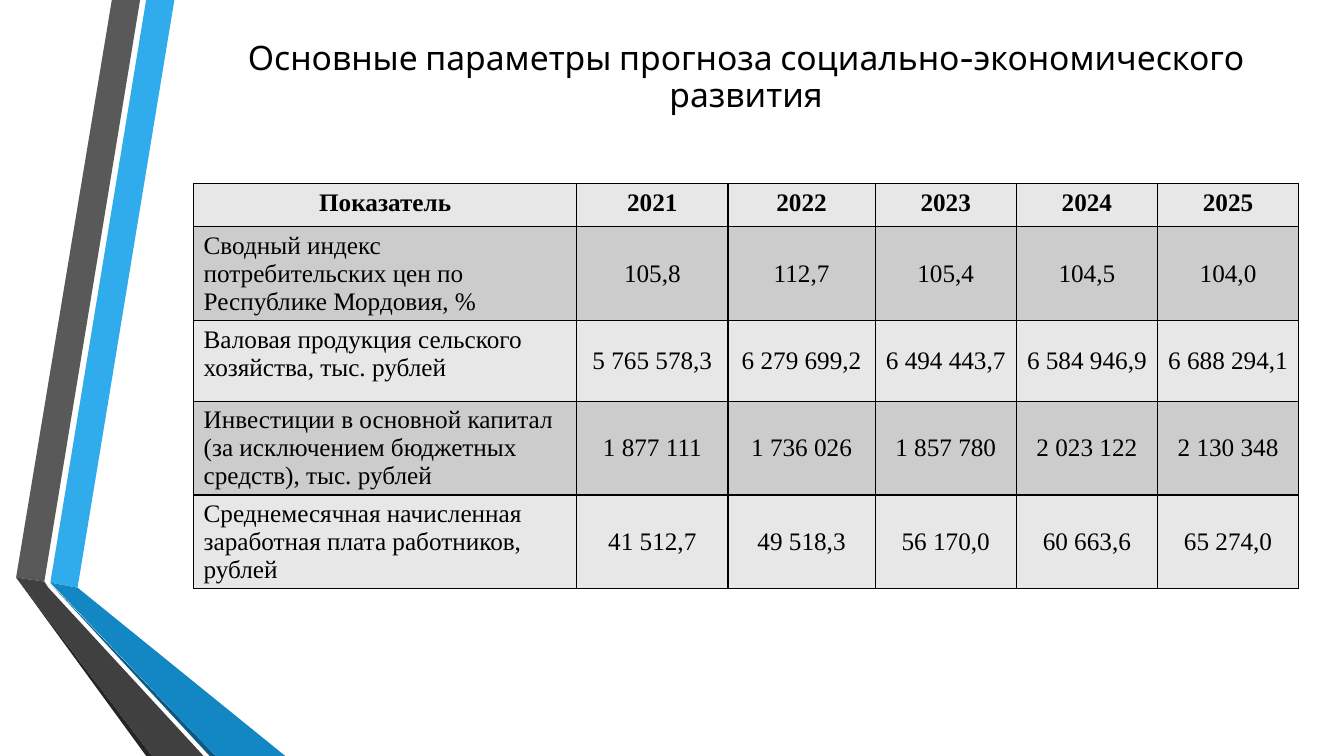
import pptx
import pptx.util
import pptx.dml.color
import pptx.enum.text
import pptx.oxml
import pptx.oxml.ns
from pptx.util import Inches

ALIGN = pptx.enum.text.PP_ALIGN
ANCHOR = pptx.enum.text.MSO_ANCHOR


def color(hex_code):
    return pptx.dml.color.RGBColor.from_string(hex_code)


def write(frame, text, font, size, bold=False, align=ALIGN.CENTER, spacing=1.0):
    para = frame.paragraphs[0]
    para.alignment = align
    para.line_spacing = spacing
    span = para.add_run()
    span.text = text
    span.font.name = font
    span.font.size = pptx.util.Pt(size)
    span.font.bold = bold
    span.font.color.rgb = color("000000")


deck = pptx.Presentation()
deck.slide_width = Inches(13.33)
deck.slide_height = Inches(7.5)
page = deck.slides.add_slide(deck.slide_layouts[5])

# Folded ribbons along the left edge
ribbons = [
    ("30ACEC", [(0.5, 5.78), (0.77, 5.83), (1.73, 0), (1.45, 0)]),
    ("595959", [(1.39, 0), (1.11, 0), (0.16, 5.73), (0.44, 5.77)]),
    ("262626", [(0.16, 5.73), (1.45, 7.5), (1.51, 7.5)]),
    ("0C5A82", [(0.5, 5.79), (2.08, 7.5), (2.14, 7.5)]),
    ("1287C3", [(0.5, 5.78), (2.14, 7.5), (2.83, 7.5), (0.77, 5.83)]),
    ("404040", [(2.02, 7.5), (0.48, 5.83), (0.44, 5.77), (0.16, 5.73), (1.51, 7.5)]),
]
for fill, points in ribbons:
    corners = [(Inches(x), Inches(y)) for x, y in points]
    builder = page.shapes.build_freeform(*corners[0])
    builder.add_line_segments(corners[1:], close=True)
    ribbon = builder.convert_to_shape()
    ribbon.shadow.inherit = False
    ribbon.fill.solid()
    ribbon.fill.fore_color.rgb = color(fill)
    ribbon.line.fill.background()

title = page.shapes.title
title.left, title.top = Inches(1.92), Inches(0.27)
title.width, title.height = Inches(10.96), Inches(1.01)
title.text_frame.word_wrap = True
title.text_frame.auto_size = pptx.enum.text.MSO_AUTO_SIZE.NONE
title.text_frame.vertical_anchor = ANCHOR.MIDDLE
write(title.text_frame, "Основные параметры прогноза социально-экономического развития",
      "Cabin", 24, spacing=0.9)

rows = [
    ["Показатель", "2021", "2022", "2023", "2024", "2025"],
    ["Сводный индекс потребительских цен по Республике Мордовия, %",
     "105,8", "112,7", "105,4", "104,5", "104,0"],
    ["Валовая продукция сельского хозяйства, тыс. рублей",
     "5 765 578,3", "6 279 699,2", "6 494 443,7", "6 584 946,9", "6 688 294,1"],
    ["Инвестиции в основной капитал (за исключением бюджетных средств), тыс. рублей",
     "1 877 111", "1 736 026", "1 857 780", "2 023 122", "2 130 348"],
    ["Среднемесячная начисленная заработная плата работников, рублей",
     "41 512,7", "49 518,3", "56 170,0", "60 663,6", "65 274,0"],
]
column_widths = [3.8, 1.5, 1.46, 1.4, 1.4, 1.4]
row_heights = [0.43, 0.93, 0.8, 0.93, 0.93]
table = page.shapes.add_table(
    len(rows), len(column_widths), Inches(1.92), Inches(1.82),
    Inches(sum(column_widths)), Inches(sum(row_heights))).table
for column, width in zip(table.columns, column_widths):
    column.width = Inches(width)
for row, height in zip(table.rows, row_heights):
    row.height = Inches(height)

for row_index, row in enumerate(rows):
    for column_index, text in enumerate(row):
        cell = table.cell(row_index, column_index)
        is_header = row_index == 0
        is_label = column_index == 0 and not is_header
        cell.vertical_anchor = ANCHOR.TOP if is_header or is_label else ANCHOR.MIDDLE
        write(cell.text_frame, text, "Times New Roman", 18, bold=is_header,
              align=ALIGN.LEFT if is_label else ALIGN.CENTER)
        properties = cell._tc.get_or_add_tcPr()
        for side in ("lnL", "lnR", "lnT", "lnB"):
            properties.append(pptx.oxml.parse_xml(
                f'<a:{side} {pptx.oxml.ns.nsdecls("a")} w="12700"><a:solidFill>'
                f'<a:srgbClr val="000000"/></a:solidFill></a:{side}>'))
        cell.fill.solid()
        cell.fill.fore_color.rgb = color("CCCCCC" if row_index % 2 else "E7E7E7")

deck.save("out.pptx")
